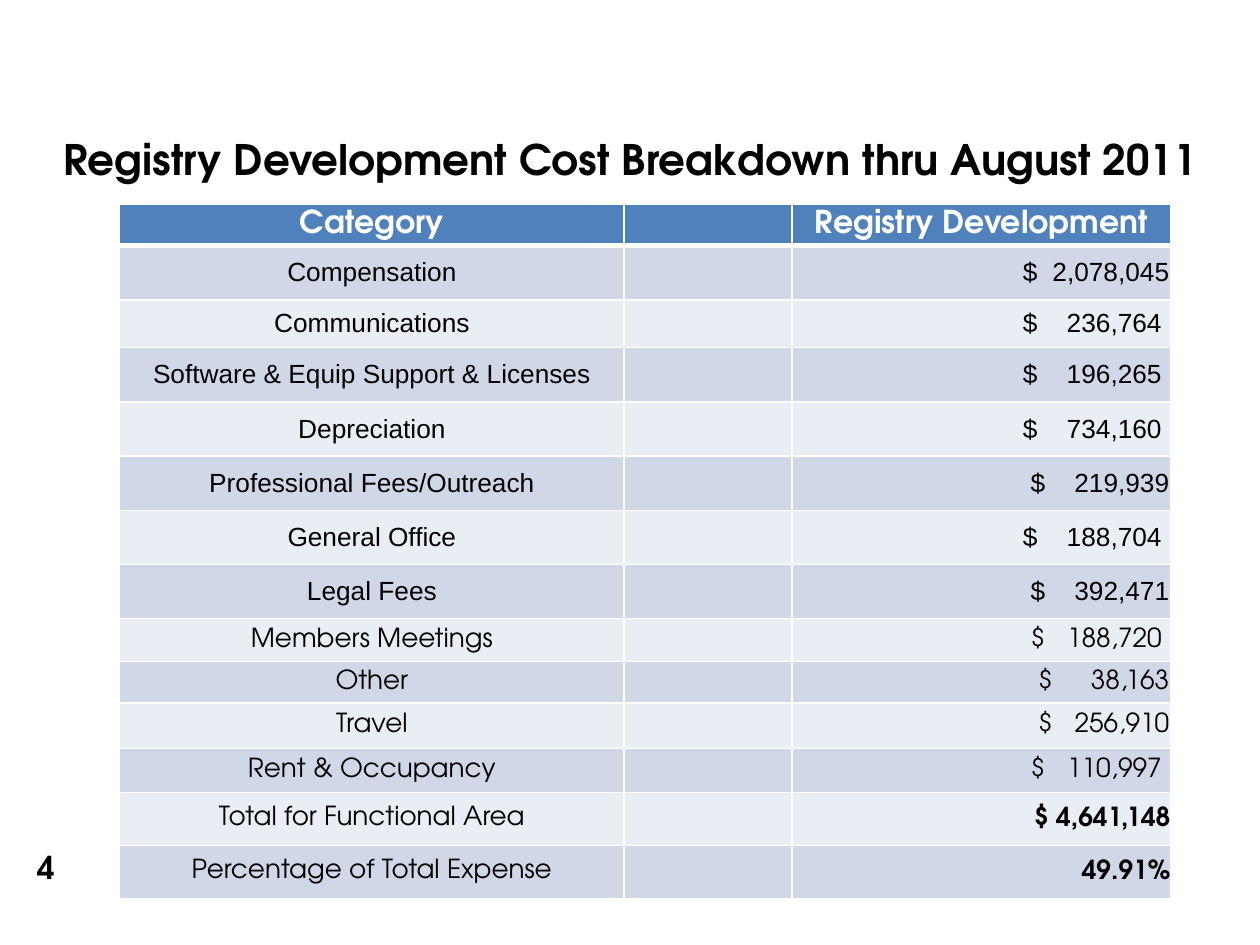
"""Build the registry development cost breakdown slide."""
from dataclasses import dataclass

from lxml import etree
from pptx import Presentation
from pptx.dml.color import RGBColor
from pptx.enum.text import MSO_ANCHOR, MSO_AUTO_SIZE, PP_ALIGN
from pptx.oxml.ns import qn
from pptx.util import Emu, Inches, Pt

LEFT, CENTER, RIGHT = PP_ALIGN.LEFT, PP_ALIGN.CENTER, PP_ALIGN.RIGHT
MIDDLE = MSO_ANCHOR.MIDDLE
FIT_SHAPE = MSO_AUTO_SIZE.SHAPE_TO_FIT_TEXT
BLACK = RGBColor(0x00, 0x00, 0x00)
WHITE = RGBColor(0xFF, 0xFF, 0xFF)
BLUE = RGBColor(0x4F, 0x81, 0xBD)
BANDS = RGBColor(0xE9, 0xED, 0xF4), RGBColor(0xD0, 0xD8, 0xE8)
DISPLAY, BODY = "TeX Gyre Adventor", "Arial"
WIDTH, HEIGHT = Inches(10), Inches(7.5)
COLUMN_SHARES = 0.48, 0.16, 0.36
TABLE_BOX = 0.095, 0.216, 0.834, 0.735
TITLE_BOX = 0, 0.108, 1, 0.12
NUMBER_BOX = 0.02, 0.891, 0.034, 0.053


@dataclass
class CostRow:
    """A table row; sign and gap are shares of the amount column."""
    category: str
    amount: str
    weight: int
    font: str = DISPLAY
    sign: float = 0
    gap: float = 0
    bold: bool = False


ROWS = [
    CostRow("Compensation", "2,078,045", 43, BODY, 0.61),
    CostRow("Communications", "236,764", 38, BODY, 0.61, 0.02),
    CostRow("Software & Equip Support & Licenses", "196,265", 43, BODY, 0.61, 0.02),
    CostRow("Depreciation", "734,160", 43, BODY, 0.61, 0.02),
    CostRow("Professional Fees/Outreach", "219,939", 43, BODY, 0.63),
    CostRow("General Office", "188,704", 43, BODY, 0.61, 0.02),
    CostRow("Legal Fees", "392,471", 43, BODY, 0.63),
    CostRow("Members Meetings", "188,720", 34, sign=0.63, gap=0.02),
    CostRow("Other", "38,163", 33, sign=0.65),
    CostRow("Travel", "256,910", 36, sign=0.65),
    CostRow("Rent & Occupancy", "110,997", 35, sign=0.63, gap=0.02),
    CostRow("Total for Functional Area", "$ 4,641,148", 42, bold=True),
    CostRow("Percentage of Total Expense", "49.91%", 42, bold=True),
]
HEADER_WEIGHT = 33


def place(box: tuple) -> list[Emu]:
    """Turn shares of the slide into lengths."""
    return [Emu(int(share * side)) for share, side in zip(box, (WIDTH, HEIGHT) * 2)]


def write(tf, text: str, *, size: float = 15, font: str = DISPLAY,
          color: RGBColor = BLACK, bold: bool = False, align=CENTER):
    """Write one formatted paragraph and return it."""
    p = tf.paragraphs[0]
    p.alignment = align
    r = p.add_run()
    r.text = text
    r.font.size, r.font.name, r.font.bold = Pt(size), font, bold
    r.font.color.rgb = color
    return p


def style_cell(cell, fill: RGBColor, top: float = 1, bottom: float = 1) -> None:
    """Give a cell white borders, a fill and no insets."""
    tcPr = cell._tc.get_or_add_tcPr()
    for side, width in (("L", 1), ("R", 1), ("T", top), ("B", bottom)):
        ln = etree.SubElement(tcPr, qn(f"a:ln{side}"), w=str(Pt(width)))
        solid = etree.SubElement(ln, qn("a:solidFill"))
        etree.SubElement(solid, qn("a:srgbClr"), val=str(WHITE))
    cell.fill.solid()
    cell.fill.fore_color.rgb = fill
    cell.vertical_anchor = MIDDLE
    cell.margin_left = cell.margin_right = cell.margin_top = cell.margin_bottom = 0


def write_amount(cell, row: CostRow, width: int) -> None:
    """Write an amount, with its dollar sign set apart by a right tab."""
    if not row.sign:
        write(cell.text_frame, row.amount, bold=row.bold, align=RIGHT)
        return
    cell.margin_left = Emu(int(row.sign * width))
    p = write(cell.text_frame, f"$\t{row.amount}", font=row.font, align=LEFT)
    tabs = etree.SubElement(p._p.get_or_add_pPr(), qn("a:tabLst"))
    stop = int((1 - row.sign - row.gap) * width) - Inches(0.01)
    etree.SubElement(tabs, qn("a:tab"), pos=str(stop), algn="r")


def add_cost_table(s) -> None:
    """Add the table of costs by category."""
    x, y, w, h = place(TABLE_BOX)
    table = s.shapes.add_table(len(ROWS) + 1, len(COLUMN_SHARES), x, y, w, h).table
    for column, share in zip(table.columns, COLUMN_SHARES):
        column.width = Emu(int(share * w))
    weights = [HEADER_WEIGHT] + [row.weight for row in ROWS]
    for line, weight in zip(table.rows, weights):
        line.height = Emu(int(h * weight / sum(weights)))
    for cell, text in zip(table.rows[0].cells, ("Category", "", "Registry Development")):
        style_cell(cell, BLUE, bottom=3)
        if text:
            write(cell.text_frame, text, size=18, color=WHITE, bold=True)
    for i, row in enumerate(ROWS, 1):
        cells = list(table.rows[i].cells)
        for cell in cells:
            style_cell(cell, BANDS[i % 2], top=3 if i == 1 else 1)
        write(cells[0].text_frame, row.category, font=row.font)
        write_amount(cells[2], row, table.columns[2].width)


def main() -> None:
    """Build and save the slide."""
    prs = Presentation()
    prs.slide_width, prs.slide_height = WIDTH, HEIGHT
    s = prs.slides.add_slide(prs.slide_layouts[5])
    add_cost_table(s)
    title = s.shapes.title
    title.left, title.top, title.width, title.height = place(TITLE_BOX)
    title.text_frame.vertical_anchor = MIDDLE
    write(title.text_frame, "Registry Development Cost Breakdown thru August 2011",
          size=24, bold=True)
    tf = s.shapes.add_textbox(*place(NUMBER_BOX)).text_frame
    tf.word_wrap = False
    tf.auto_size = FIT_SHAPE
    write(tf, "4", size=18, bold=True, align=LEFT)
    prs.save("out.pptx")


if __name__ == "__main__":
    main()
